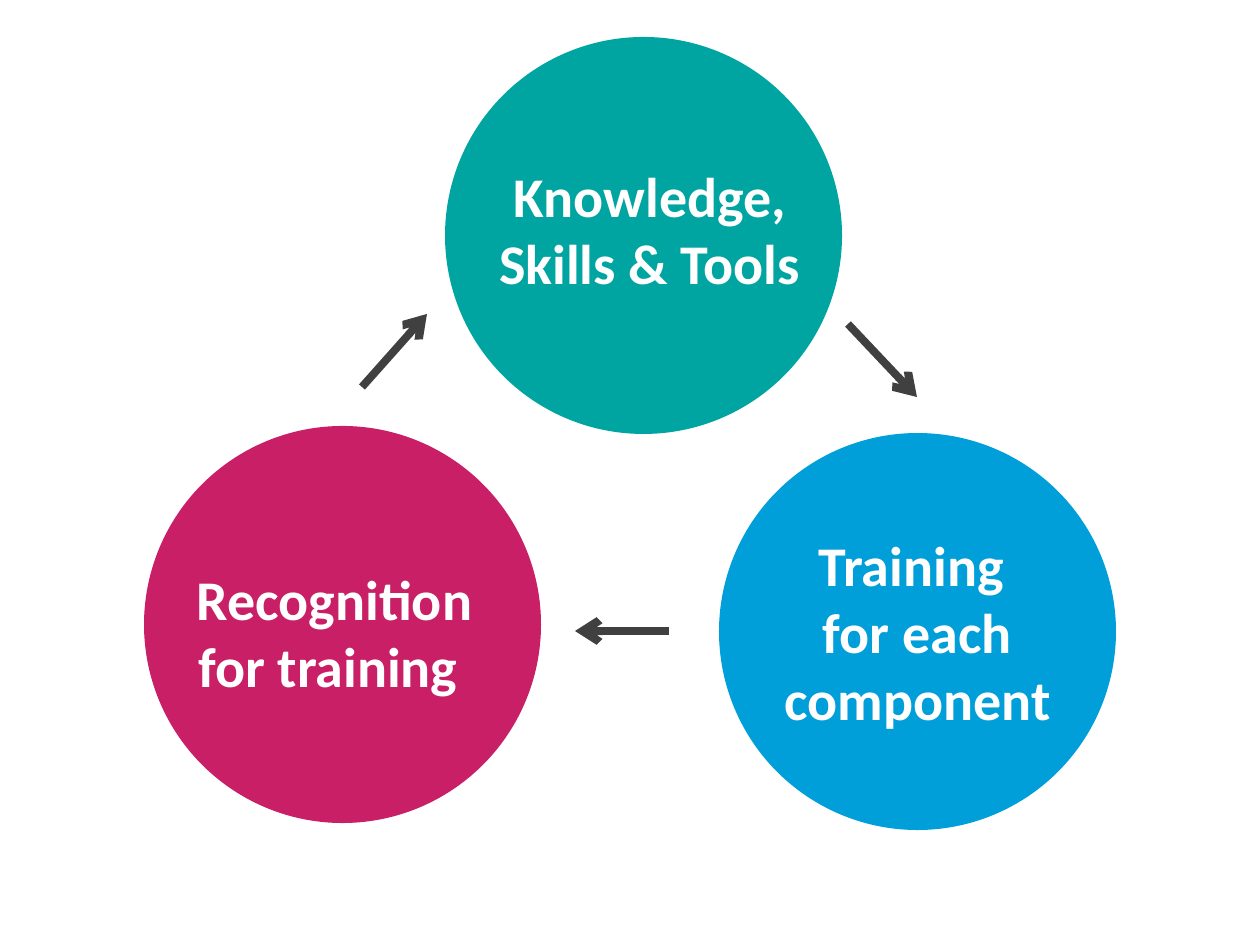
from lxml import etree
from pptx import Presentation
from pptx.dml.color import RGBColor
from pptx.enum.shapes import MSO_CONNECTOR, MSO_SHAPE
from pptx.enum.text import MSO_AUTO_SIZE, PP_ALIGN
from pptx.oxml.ns import qn
from pptx.util import Inches, Pt

OVAL = MSO_SHAPE.OVAL
STRAIGHT = MSO_CONNECTOR.STRAIGHT
CENTER = PP_ALIGN.CENTER
FIT_TEXT = MSO_AUTO_SIZE.SHAPE_TO_FIT_TEXT

PX_PER_INCH = 126
DIAMETER = 397
WHITE = "FFFFFF"
ARROW_GREY = "404040"

# circle left and top, fill, label box relative to the circle, label paragraphs
STAGES = [
    ((445, 37), "00A4A1", (36, 118, 338, 149), ["Knowledge, Skills & Tools"]),
    ((144, 426), "C81F66", (20, 132, 341, 149), ["Recognition for training "]),
    ((719, 433), "009FDA", (50, 91, 297, 217), ["Training ", "for each component  "]),
]
ARROWS = [
    ((848, 324), (917, 397)),
    ((669, 631), (575, 631)),
    ((362, 387), (427, 314)),
]


def px(*lengths):
    return [Inches(length / PX_PER_INCH) for length in lengths]


def color(hex_string):
    return RGBColor.from_string(hex_string)


def add_stage(slide, origin, fill, label_box, lines):
    """Draw a filled circle with its label placed relative to it."""
    left, top = origin
    circle = slide.shapes.add_shape(OVAL, *px(left, top, DIAMETER, DIAMETER))
    circle.shadow.inherit = False
    circle.fill.solid()
    circle.fill.fore_color.rgb = color(fill)
    circle.line.fill.background()

    dx, dy, width, height = label_box
    label = slide.shapes.add_textbox(*px(left + dx, top + dy, width, height))
    text_frame = label.text_frame
    text_frame.word_wrap = True
    text_frame.auto_size = FIT_TEXT
    text_frame.text = "\n".join(lines)
    for paragraph in text_frame.paragraphs:
        paragraph.alignment = CENTER
        for run in paragraph.runs:
            run.font.name = "Calibri"
            run.font.size = Pt(32)
            run.font.bold = True
            run.font.color.rgb = color(WHITE)


def add_arrow(slide, start, end):
    arrow = slide.shapes.add_connector(STRAIGHT, *px(*start, *end))
    arrow.line.color.rgb = color(ARROW_GREY)
    arrow.line.width = Pt(4.5)
    etree.SubElement(arrow.line._get_or_add_ln(), qn("a:tailEnd"), type="arrow")
    etree.SubElement(arrow._element.spPr, qn("a:effectLst"))


def add_cycle(slide):
    for stage in STAGES:
        add_stage(slide, *stage)
    for start, end in ARROWS:
        add_arrow(slide, start, end)


def main():
    presentation = Presentation()
    presentation.slide_width, presentation.slide_height = px(1260, 945)
    slide = presentation.slides.add_slide(presentation.slide_layouts[6])
    add_cycle(slide)
    presentation.save("out.pptx")


if __name__ == "__main__":
    main()
